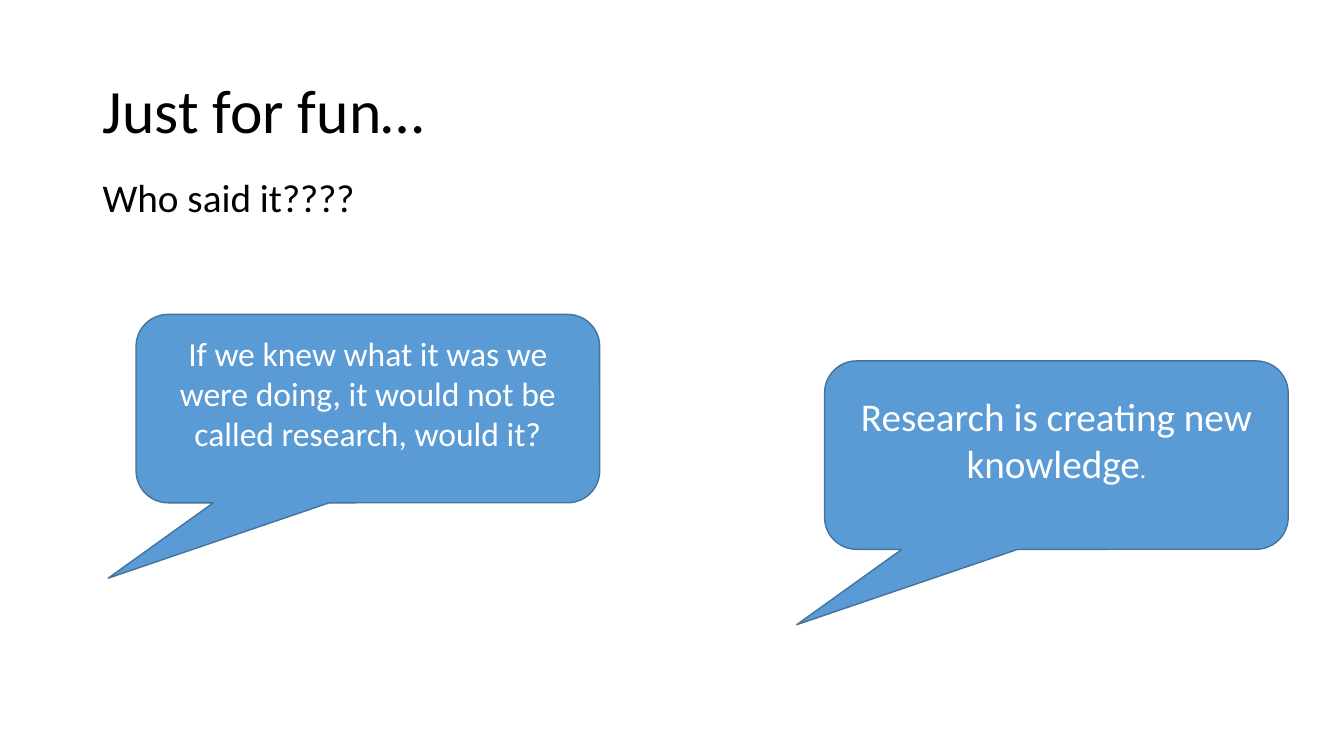
from pptx import Presentation
from pptx.dml.color import RGBColor
from pptx.enum.shapes import MSO_SHAPE
from pptx.enum.text import MSO_ANCHOR, MSO_AUTO_SIZE, PP_ALIGN
from pptx.util import Pt

# Content
TITLE = "Just for fun…"
QUESTION = "Who said it????"
# Each quote: left, top, runs of (text, size)
QUOTES = [
    (97.2, 224.6, [("If we knew what it was we were doing, "
                    "it would not be called research, would it?", 24)]),
    (589, 257.8, [("Research is creating new knowledge", 28), (".", 18)]),
]

# Format
FONT = "Calibri"
COLORS = {"text": "000000", "quote": "FFFFFF", "fill": "5B9BD5", "line": "43739E"}
MARGIN = 66.2
CALLOUT_SIZE = (331.2, 134.6)
CALLOUT_ADJUSTMENTS = (-0.56, 0.9, 0.17)
CALLOUT_BOTTOM_INSET = 25.6


def color(name):
    return RGBColor.from_string(COLORS[name])


def write_text(shape, runs, color_name="text", align=PP_ALIGN.LEFT,
               anchor=MSO_ANCHOR.MIDDLE, line_spacing=1.0, bottom_inset=3.6):
    frame = shape.text_frame
    frame.word_wrap = True
    frame.auto_size = MSO_AUTO_SIZE.NONE
    frame.vertical_anchor = anchor
    frame.margin_bottom = Pt(bottom_inset)
    paragraph = frame.paragraphs[0]
    paragraph.alignment = align
    paragraph.line_spacing = line_spacing
    for text, size in runs:
        run = paragraph.add_run()
        run.text = text
        run.font.name = FONT
        run.font.size = Pt(size)
        run.font.color.rgb = color(color_name)


presentation = Presentation()
presentation.slide_width, presentation.slide_height = Pt(960), Pt(540)
slide = presentation.slides.add_slide(presentation.slide_layouts[5])

# Title
title = slide.shapes.title
title.left, title.top, title.width, title.height = Pt(MARGIN), Pt(28.8), Pt(828), Pt(104.4)
write_text(title, [(TITLE, 44)], line_spacing=0.9)

# Question
question = slide.shapes.add_textbox(Pt(MARGIN), Pt(120.2), Pt(824.4), Pt(41))
write_text(question, [(QUESTION, 28)], anchor=MSO_ANCHOR.TOP)

# Speech bubbles
for left, top, runs in QUOTES:
    callout = slide.shapes.add_shape(MSO_SHAPE.ROUNDED_RECTANGULAR_CALLOUT,
                                     Pt(left), Pt(top), *map(Pt, CALLOUT_SIZE))
    for index, value in enumerate(CALLOUT_ADJUSTMENTS):
        callout.adjustments[index] = value
    callout.shadow.inherit = False
    callout.fill.solid()
    callout.fill.fore_color.rgb = color("fill")
    callout.line.color.rgb = color("line")
    callout.line.width = Pt(1)
    write_text(callout, runs, color_name="quote", align=PP_ALIGN.CENTER,
               bottom_inset=CALLOUT_BOTTOM_INSET)

presentation.save("out.pptx")
